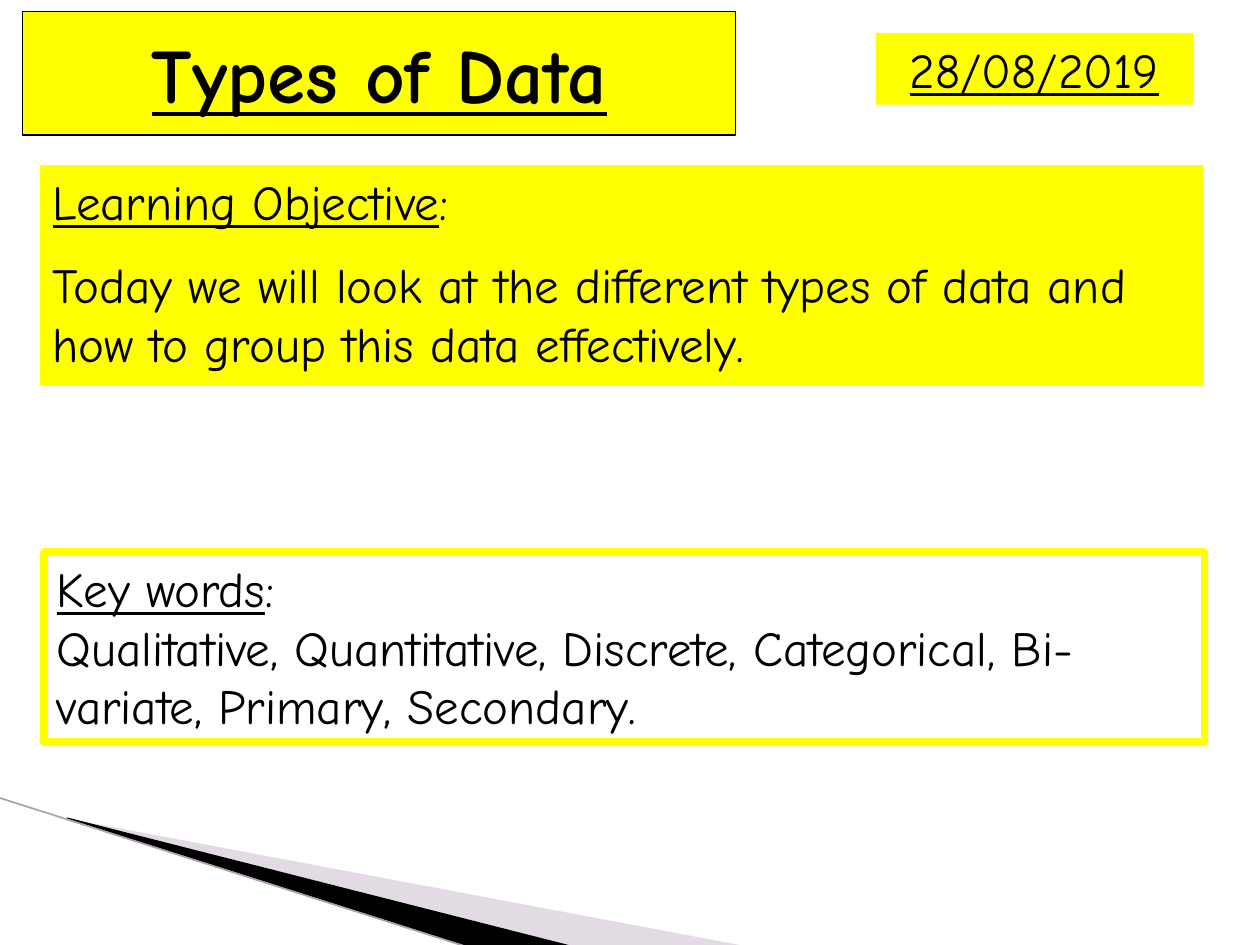
"""Build the Types of Data lesson title slide."""
from lxml import etree
from pptx import Presentation
from pptx.dml.color import RGBColor
from pptx.enum.shapes import MSO_CONNECTOR, MSO_SHAPE
from pptx.enum.text import MSO_ANCHOR, PP_ALIGN
from pptx.oxml.ns import qn
from pptx.util import Pt

LEFT, CENTER = PP_ALIGN.LEFT, PP_ALIGN.CENTER
TOP, MIDDLE = MSO_ANCHOR.TOP, MSO_ANCHOR.MIDDLE
RECT, STRAIGHT = MSO_SHAPE.RECTANGLE, MSO_CONNECTOR.STRAIGHT
YELLOW, BLACK = "FFFF00", "000000"


def color(code):
    return RGBColor.from_string(code)


deck = Presentation()
deck.slide_width, deck.slide_height = Pt(720), Pt(540)
slide = deck.slides.add_slide(deck.slide_layouts[6])
shapes = slide.shapes

wedges = [
    ([(39.6, 468.5), (428.4, 540.7), (328.3, 540.7), (39.6, 468)], "B9A5BC", 40),
    ([(38.2, 467.3), (329, 540.7), (267.8, 541.4), (38.9, 468)], BLACK, 100),
]
for points, fill, alpha in wedges:
    path = shapes.build_freeform(*points[0], scale=Pt(1))
    path.add_line_segments(points[1:], close=True)
    wedge = path.convert_to_shape()
    wedge.shadow.inherit = False
    wedge.fill.solid()
    wedge.fill.fore_color.rgb = color(fill)
    wedge.line.fill.background()
    if alpha < 100:
        tint = wedge._element.spPr.find(".//" + qn("a:srgbClr"))
        etree.SubElement(tint, qn("a:alpha"), val=str(alpha * 1000))

edge = shapes.add_connector(STRAIGHT, Pt(-0.7), Pt(455.8), Pt(267.8), Pt(541.4))
edge.line.color.rgb = color("B29CB5")
edge.line.width = Pt(0.95)
etree.SubElement(edge._element.spPr, qn("a:effectLst"))

goal = "Today we will look at the different types of data and how to group this data effectively."
words = ":\vQualitative, Quantitative, Discrete, Categorical, Bi-variate, Primary, Secondary."
boxes = [
    ((23, 94.3, 664.6, 126), YELLOW, None, 0, LEFT, TOP, 28, False,
     [("Learning Objective", ":"), ("", goal)]),
    ((500.4, 18.8, 181.4, 41), YELLOW, None, 0, CENTER, TOP, 28, False,
     [("28/08/2019", "")]),
    ((25.2, 315.4, 663.1, 108.7), None, YELLOW, 4.5, LEFT, TOP, 28, False,
     [("Key words", words)]),
    ((13, 6.5, 407.5, 70.6), YELLOW, BLACK, 0.75, CENTER, MIDDLE, 44, True,
     [("Types of Data", "")]),
]
for place, fill, line, width, align, anchor, size, bold, lines in boxes:
    box = shapes.add_shape(RECT, *map(Pt, place))
    box.shadow.inherit = False
    if fill:
        box.fill.solid()
        box.fill.fore_color.rgb = color(fill)
    else:
        box.fill.background()
    if line:
        box.line.color.rgb = color(line)
        box.line.width = Pt(width)
    else:
        box.line.fill.background()
    frame = box.text_frame
    frame.word_wrap = True
    frame.vertical_anchor = anchor
    for row, (head, rest) in enumerate(lines):
        para = frame.add_paragraph() if row else frame.paragraphs[0]
        para.alignment = align
        if row:
            para.space_before = Pt(14)
        font = para.font
        font.name, font.size, font.bold = "Comic Neue", Pt(size), bold
        font.color.rgb = color(BLACK)
        if head:
            run = para.add_run()
            run.text = head
            run.font.underline = True
        for part, text in enumerate(rest.split("\v")):
            if part:
                para.add_line_break()
            if text:
                para.add_run().text = text

deck.save("out.pptx")
